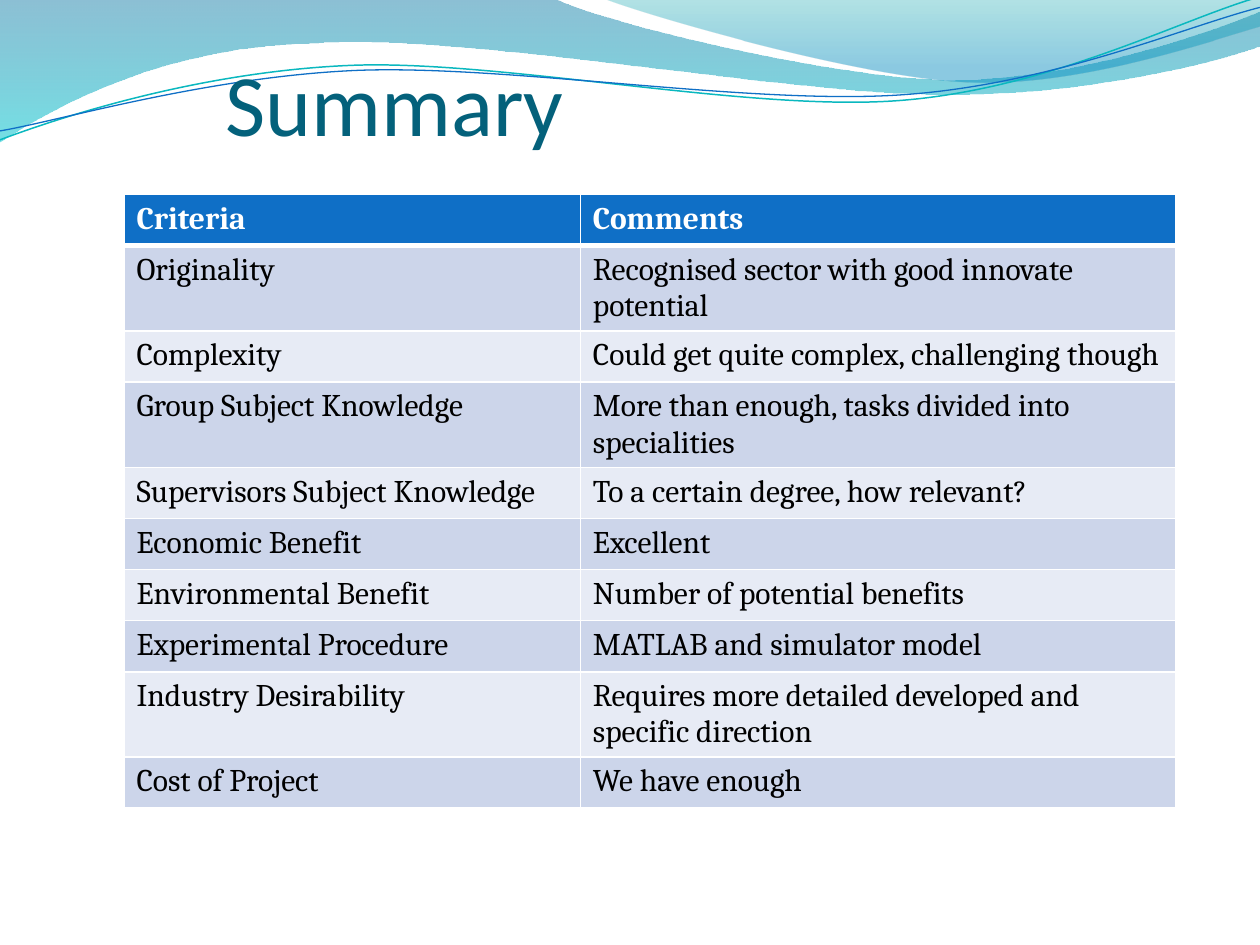
from lxml import etree
from pptx import Presentation
from pptx.dml.color import RGBColor
from pptx.enum.text import MSO_ANCHOR, MSO_AUTO_SIZE, PP_ALIGN
from pptx.oxml.ns import qn
from pptx.util import Cm, Pt

TOP, LEFT = MSO_ANCHOR.TOP, PP_ALIGN.LEFT
NO_AUTOFIT = MSO_AUTO_SIZE.NONE
TITLE_ONLY = 5

# Content
TITLE = "Summary"
CRITERIA = [
    ("Criteria", "Comments"),
    ("Originality", "Recognised sector with good innovate potential"),
    ("Complexity", "Could get quite complex, challenging though"),
    ("Group Subject Knowledge", "More than enough, tasks divided into specialities"),
    ("Supervisors Subject Knowledge", "To a certain degree, how relevant?"),
    ("Economic Benefit", "Excellent"),
    ("Environmental Benefit", "Number of potential benefits"),
    ("Experimental Procedure", "MATLAB and simulator model"),
    ("Industry Desirability", "Requires more detailed developed and specific direction"),
    ("Cost of Project", "We have enough"),
]

# Colours and type
THEME = {
    "title": {"name": "Calibri", "size": Pt(50), "bold": False, "color": "04617B"},
    "header": {"name": "Cambria", "size": Pt(18), "bold": True, "color": "FFFFFF"},
    "body": {"name": "Cambria", "size": Pt(18), "bold": False, "color": "000000"},
    "header_fill": "0F6FC6",
    "bands": ("CCD5EA", "E7EBF5"),
    "border": "FFFFFF",
}

# Wave outlines in cm: a start, then line ends (1 point) or Bezier curves (3 points)
# Gradient stops: position, colour, opacity in percent
BANDS = [
    {"start": (0, 0),
     "steps": [[(11.18, -0.03)],
               [(12.09, 0.43), (16.87, 1.6), (19.25, 1.6)],
               [(21.67, 1.6), (24.33, 0.66), (25.4, 0.23)],
               [(25.43, 0.91)],
               [(24.97, 1.12), (22.1, 1.93), (18.95, 1.9)],
               [(15.8, 1.9), (9.7, 0.71), (6.53, 0.86)],
               [(3.28, 0.91), (1.17, 2.11), (-0.03, 2.87)]],
     "stops": [(0, "0074A1", 45), (1, "00C6CF", 55)]},
    {"start": (12.17, -0.03),
     "steps": [[(12.93, 0.28), (17.32, 1.57), (19.53, 1.65)],
               [(21.74, 1.75), (24.41, 0.81), (25.4, 0.53)],
               [(25.4, 0)]],
     "stops": [(0, "00A1A9", 30), (0.8, "008BBF", 45)]},
]
STRANDS = [
    {"start": (0, 2.82),
     "steps": [[(1.22, 2.36), (4.01, 1.45), (7.04, 1.32)],
               [(10.03, 1.19), (15.06, 2.26), (18.11, 2.03)],
               [(21.16, 1.8), (23.83, 0.38), (25.35, -0.05)]],
     "color": "0AB8BF", "width": 0.85},
    {"start": (0, 2.64),
     "steps": [[(1.19, 2.44), (4.17, 1.55), (7.19, 1.42)],
               [(10.24, 1.3), (15.16, 2.13), (18.21, 1.91)],
               [(21.23, 1.7), (23.9, 0.53), (25.4, 0.15)]],
     "color": "0F6FC6", "width": 0.75},
]


def rgb(code):
    return RGBColor.from_string(code)


def set_all(target, values):
    for key, value in values.items():
        setattr(target, key, value)


def style_font(font, style):
    for key, value in style.items():
        if key == "color":
            font.color.rgb = rgb(value)
        else:
            setattr(font, key, value)


def add_wave(slide, wave, closed):
    """Build the outline through the step ends, then bend the curved steps."""
    start_x, start_y = wave["start"]
    builder = slide.shapes.build_freeform(Cm(start_x), Cm(start_y))
    builder.add_line_segments([(Cm(x), Cm(y)) for *_, (x, y) in wave["steps"]],
                              close=closed)
    shape = builder.convert_to_shape()
    shape.shadow.inherit = False
    segments = list(shape._element.iter(qn("a:lnTo")))
    for segment, step in zip(segments, wave["steps"]):
        if len(step) == 1:
            continue
        curve = etree.Element(qn("a:cubicBezTo"))
        for x, y in step:
            etree.SubElement(curve, qn("a:pt"), x=str(Cm(x) - shape.left),
                             y=str(Cm(y) - shape.top))
        segment.getparent().replace(segment, curve)
    return shape


def add_band(slide, band):
    shape = add_wave(slide, band, closed=True)
    shape.line.fill.background()
    shape.fill.gradient()
    shape.fill.gradient_angle = 270
    for stop, (position, color, _) in zip(shape.fill.gradient_stops, band["stops"]):
        stop.position = position
        stop.color.rgb = rgb(color)
    for gs, (_, _, opacity) in zip(shape._element.iter(qn("a:gs")), band["stops"]):
        etree.SubElement(gs[0], qn("a:alpha"), val=str(opacity * 1000))


def add_strand(slide, strand):
    shape = add_wave(slide, strand, closed=False)
    shape.fill.background()
    shape.line.color.rgb = rgb(strand["color"])
    shape.line.width = Pt(strand["width"])


def set_borders(cell, widths):
    """Draw cell borders; they must come before the fill in the XML."""
    properties = cell._tc.get_or_add_tcPr()
    for index, (side, width) in enumerate(widths.items()):
        border = etree.Element(qn(f"a:ln{side}"), w=str(Pt(width)))
        fill = etree.SubElement(border, qn("a:solidFill"))
        etree.SubElement(fill, qn("a:srgbClr"), val=THEME["border"])
        properties.insert(index, border)


def add_criteria_table(slide):
    column_widths, row_height = (Cm(9.2), Cm(12)), Cm(1.03)
    table = slide.shapes.add_table(
        len(CRITERIA), len(column_widths), Cm(2.5), Cm(3.92),
        sum(column_widths), row_height * len(CRITERIA)).table
    for column, width in zip(table.columns, column_widths):
        column.width = width
    for r, row in enumerate(CRITERIA):
        table.rows[r].height = row_height
        fill = THEME["bands"][(r - 1) % 2] if r else THEME["header_fill"]
        for c, text in enumerate(row):
            cell = table.cell(r, c)
            cell.text = text
            cell.fill.solid()
            cell.fill.fore_color.rgb = rgb(fill)
            style_font(cell.text_frame.paragraphs[0].runs[0].font,
                       THEME["body" if r else "header"])
            set_borders(cell, {"L": 1, "R": 1, "T": 3 if r == 1 else 1,
                               "B": 1 if r else 3})


def place_title(slide):
    title = slide.shapes.title
    set_all(title, {"left": Cm(4.29), "top": Cm(0.86),
                    "width": Cm(19.84), "height": Cm(3.18)})
    frame = title.text_frame
    frame.text = TITLE
    set_all(frame, {"vertical_anchor": TOP, "auto_size": NO_AUTOFIT,
                    "word_wrap": True, "margin_top": Cm(0.12)})
    frame.paragraphs[0].alignment = LEFT
    style_font(frame.paragraphs[0].runs[0].font, THEME["title"])
    # Bring the title in front of the waves
    slide.shapes._spTree.append(title._element)


def main():
    deck = Presentation()
    set_all(deck, {"slide_width": Cm(25.4), "slide_height": Cm(19.05)})
    slide = deck.slides.add_slide(deck.slide_layouts[TITLE_ONLY])
    # Wave decoration
    for band in BANDS:
        add_band(slide, band)
    for strand in STRANDS:
        add_strand(slide, strand)
    # Title and table
    place_title(slide)
    add_criteria_table(slide)
    deck.save("out.pptx")


if __name__ == "__main__":
    main()
